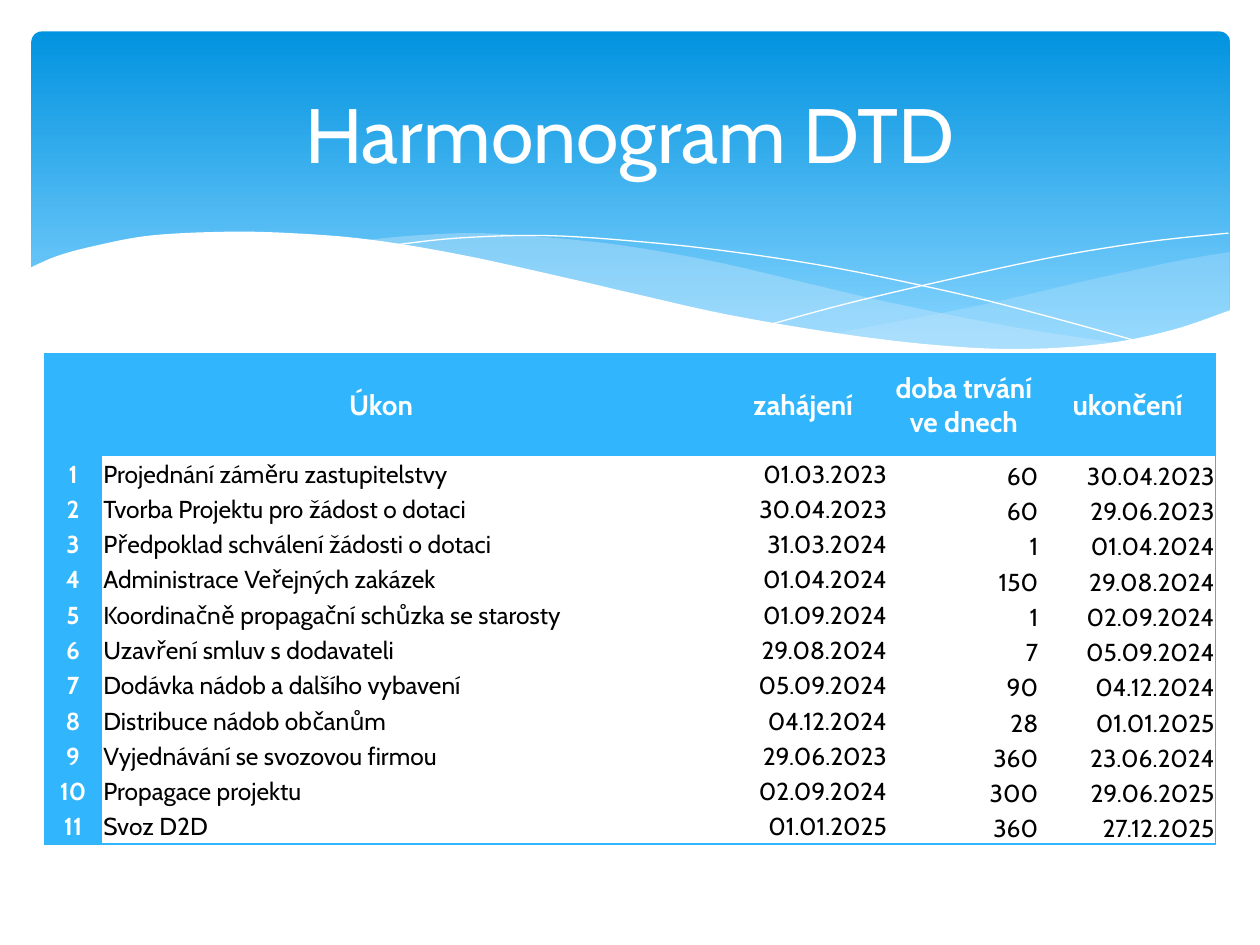
from lxml.etree import SubElement
from pptx import Presentation
from pptx.dml.color import RGBColor
from pptx.enum.shapes import MSO_SHAPE
from pptx.enum.text import MSO_ANCHOR, PP_ALIGN
from pptx.oxml.ns import qn
from pptx.util import Inches, Pt

WHITE = RGBColor(0xFF, 0xFF, 0xFF)
BLACK = RGBColor(0, 0, 0)
SKY = RGBColor(0x31, 0xB6, 0xFD)
DEEP_BLUE = RGBColor(0x02, 0x93, 0xE0)
PALE_BLUE = RGBColor(0x83, 0xD3, 0xFE)
MIST = RGBColor(0xC6, 0xE7, 0xFC)
FONT = "Cabin"
COLUMNS, ROWS = 100, 75
NO_GRID_STYLE = "{2D5ABB26-0587-4C30-8999-92F81FD0307C}"

# Each wave is a list of edges; an edge is a smooth run of grid points.
RIGHT_WAVE = [
    [(97.6, 20), (93.5, 20.7), (86.1, 22.3), (77.9, 24.2), (66.1, 26.5)],
    [(66.1, 26.5), (71.9, 27.2), (78.1, 27.7), (84.4, 27.7), (89.7, 27), (94.2, 25.9), (97.6, 24.7)],
]
MIDDLE_WAVE = [
    [(89.3, 27.3), (80.7, 26), (70.6, 24), (62.9, 22.2), (56.9, 20.8), (50.2, 19.6),
     (44.2, 18.9), (38, 18.5), (32.8, 18.7), (28.6, 19.1)],
    [(28.6, 19.1), (36.2, 20.3), (44.9, 22.2), (53, 24), (60.1, 25.5), (68, 26.8),
     (74.8, 27.6), (81.8, 27.8), (89.3, 27.3)],
]
WHITE_WAVE = [
    [(97.7, 24.6), (93, 26.2), (87.5, 27.3), (80.9, 27.7), (74.4, 27.4), (66.8, 26.5),
     (57.9, 25), (50.3, 23.3), (44.7, 22), (36.5, 20.2), (29.2, 19), (23, 18.5),
     (17.7, 18.4), (11.9, 18.7), (7.6, 19.5), (4.6, 20.3), (2.3, 21.3)],
    [(2.3, 32.9), (97.7, 32.9)],
]
FALLING_LINE = [[(30.9, 19.5), (36.3, 18.9), (43.3, 18.7), (51, 19.2), (58.2, 20),
                 (66.5, 21.3), (76, 23.3), (83.1, 25.1), (90.7, 27.2)]]
RISING_LINE = [[(61.3, 25.7), (67.2, 24.1), (74.8, 22.3), (83.6, 20.4), (91, 19.2), (97.5, 18.5)]]

HEADINGS = ["Úkon", "", "zahájení", "doba trvání\vve dnech", "ukončení"]
TASKS = [
    ("Projednání záměru zastupitelstvy", "01.03.2023", "60", "30.04.2023"),
    ("Tvorba Projektu pro žádost o dotaci", "30.04.2023", "60", "29.06.2023"),
    ("Předpoklad schválení žádosti o dotaci", "31.03.2024", "1", "01.04.2024"),
    ("Administrace Veřejných zakázek", "01.04.2024", "150", "29.08.2024"),
    ("Koordinačně propagační schůzka se starosty", "01.09.2024", "1", "02.09.2024"),
    ("Uzavření smluv s dodavateli", "29.08.2024", "7", "05.09.2024"),
    ("Dodávka nádob a dalšího vybavení", "05.09.2024", "90", "04.12.2024"),
    ("Distribuce nádob občanům", "04.12.2024", "28", "01.01.2025"),
    ("Vyjednávání se svozovou firmou", "29.06.2023", "360", "23.06.2024"),
    ("Propagace projektu", "02.09.2024", "300", "29.06.2025"),
    ("Svoz D2D", "01.01.2025", "360", "27.12.2025"),
]


def smooth(points, steps=6):
    """Return points along the Catmull-Rom curve through the given ones."""
    if len(points) < 3:
        return points
    padded = [points[0], *points, points[-1]]
    curve = [points[0]]
    for a, b, c, d in zip(padded, padded[1:], padded[2:], padded[3:]):
        for step in range(1, steps + 1):
            t = step / steps
            curve.append(tuple(
                (2 * q + (r - p) * t + (2 * p - 5 * q + 4 * r - s) * t**2
                 + (3 * q - p - 3 * r + s) * t**3) / 2
                for p, q, r, s in zip(a, b, c, d)))
    return curve


def assign(target, values):
    for name, value in values.items():
        setattr(target, name, value)


class SlidePainter:
    """Holds the style and the current slide; lengths are grid columns and rows."""

    def __init__(self, deck):
        self.page = deck.slides.add_slide(deck.slide_layouts[5])
        self.shapes = self.page.shapes
        self.column = deck.slide_width / COLUMNS
        self.row = deck.slide_height / ROWS

    def place(self, left, top, width, height):
        return [round(value * unit) for value, unit in
                zip((left, top, width, height), (self.column, self.row) * 2)]

    def set_text(self, frame, text, align, color, **font):
        frame.text = text
        para = frame.paragraphs[0]
        para.alignment = align
        for span in para.runs:
            assign(span.font, {"name": FONT, **font})
            span.font.color.rgb = color

    def banner(self, *area):
        box = self.shapes.add_shape(MSO_SHAPE.ROUNDED_RECTANGLE, *self.place(*area))
        box.shadow.inherit = False
        box.adjustments[0] = 0.03
        box.line.fill.background()
        box.fill.gradient()
        box.fill.gradient_angle = 270
        for stop, position, color in zip(box.fill.gradient_stops, (0, 0.9), (DEEP_BLUE, PALE_BLUE)):
            stop.position = position
            stop.color.rgb = color

    def wave(self, edges, color, opacity=100, outline=False):
        points = [(x * self.column, y * self.row) for edge in edges for x, y in smooth(edge)]
        builder = self.shapes.build_freeform(*points[0])
        builder.add_line_segments(points[1:], close=not outline)
        wave = builder.convert_to_shape()
        wave.shadow.inherit = False
        painted, cleared = (wave.line.fill, wave.fill) if outline else (wave.fill, wave.line.fill)
        cleared.background()
        painted.solid()
        painted.fore_color.rgb = color
        if outline:
            wave.line.width = Pt(0)
        elif opacity < 100:
            tint = wave.element.spPr.find(qn("a:solidFill"))[0]
            SubElement(tint, qn("a:alpha"), val=str(opacity * 1000))

    def title(self, text, *area):
        title = self.shapes.title
        assign(title, dict(zip(("left", "top", "width", "height"), self.place(*area))))
        assign(title.text_frame, {"word_wrap": True, "vertical_anchor": MSO_ANCHOR.MIDDLE})
        self.set_text(title.text_frame, text, PP_ALIGN.CENTER, WHITE, size=Pt(44))
        self.shapes.element.append(title.element)

    def border(self, cell, sides):
        properties = cell._tc.get_or_add_tcPr()
        for side in sides:
            line = SubElement(properties, qn(f"a:ln{side}"), w=str(Pt(0.75)))
            fill = SubElement(line, qn("a:solidFill"))
            SubElement(fill, qn("a:srgbClr"), val=str(SKY))

    def schedule(self, left, top, widths, heights):
        area = self.place(left, top, sum(widths), sum(heights))
        frame = self.shapes.add_table(len(heights), len(widths), *area)
        next(frame.element.iter(qn("a:tableStyleId"))).text = NO_GRID_STYLE
        table = frame.table
        table.horz_banding = False
        for column, width in zip(table.columns, widths):
            column.width = round(width * self.column)
        for row, height in zip(table.rows, heights):
            row.height = round(height * self.row)
        records = [HEADINGS] + [(str(number), *task) for number, task in enumerate(TASKS, 1)]
        last_row, last_column = len(heights) - 1, len(widths) - 1
        for r, record in enumerate(records):
            for c, text in enumerate(record):
                self.schedule_cell(table.cell(r, c), text, r, c, last_row, last_column)
        table.cell(0, 0).merge(table.cell(0, 1))

    def schedule_cell(self, cell, text, r, c, last_row, last_column):
        accent = r == 0 or c == 0
        edges = {"L": c == 0, "R": c == last_column, "T": r == 0, "B": r == last_row}
        self.border(cell, [side for side, on_edge in edges.items() if on_edge])
        low = r > 0 and c > 2
        margin = Inches(0.01)
        assign(cell, {"margin_left": margin, "margin_right": margin, "margin_top": margin,
                      "margin_bottom": 0,
                      "vertical_anchor": MSO_ANCHOR.BOTTOM if low else MSO_ANCHOR.MIDDLE})
        if accent:
            cell.fill.solid()
            cell.fill.fore_color.rgb = SKY
            align = PP_ALIGN.CENTER
        else:
            cell.fill.background()
            align = PP_ALIGN.LEFT if c == 1 else PP_ALIGN.RIGHT
        self.set_text(cell.text_frame, text, align, WHITE if accent else BLACK,
                      size=Pt(14 if r else 16), bold=accent)


def main():
    deck = Presentation()
    deck.slide_width, deck.slide_height = Inches(10), Inches(7.5)
    painter = SlidePainter(deck)
    painter.banner(2.5, 2.5, 95.1, 27)
    painter.wave(RIGHT_WAVE, MIST, opacity=29)
    painter.wave(MIDDLE_WAVE, MIST, opacity=40)
    painter.wave(FALLING_LINE, WHITE, outline=True)
    painter.wave(RISING_LINE, WHITE, outline=True)
    painter.wave(WHITE_WAVE, WHITE)
    painter.schedule(3.5, 28.1, [4.6, 48.9, 13.5, 12, 14], [8.1] + [2.8] * len(TASKS))
    painter.title("Harmonogram DTD", 5, 3.7, 90, 13.7)
    deck.save("out.pptx")


if __name__ == "__main__":
    main()
